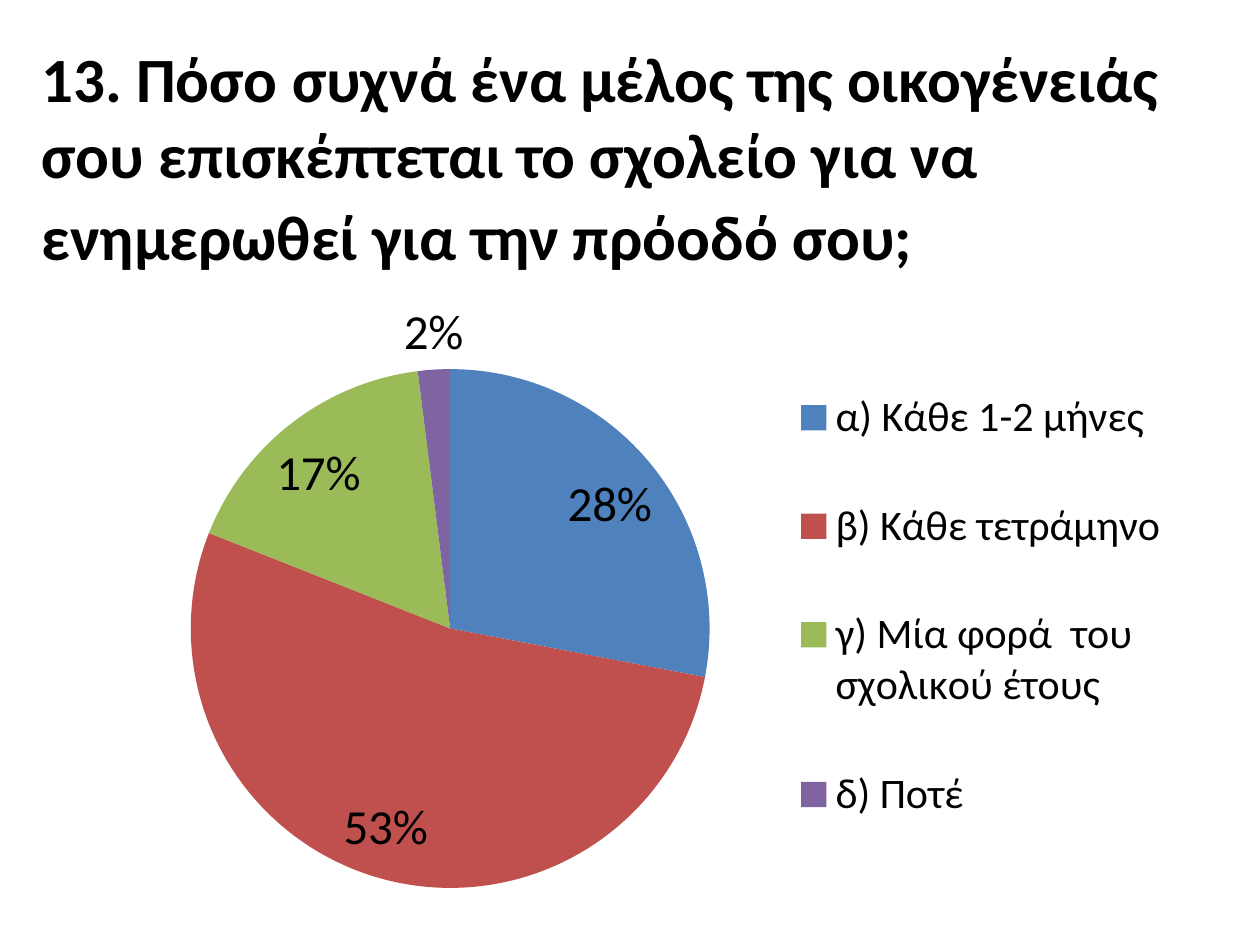
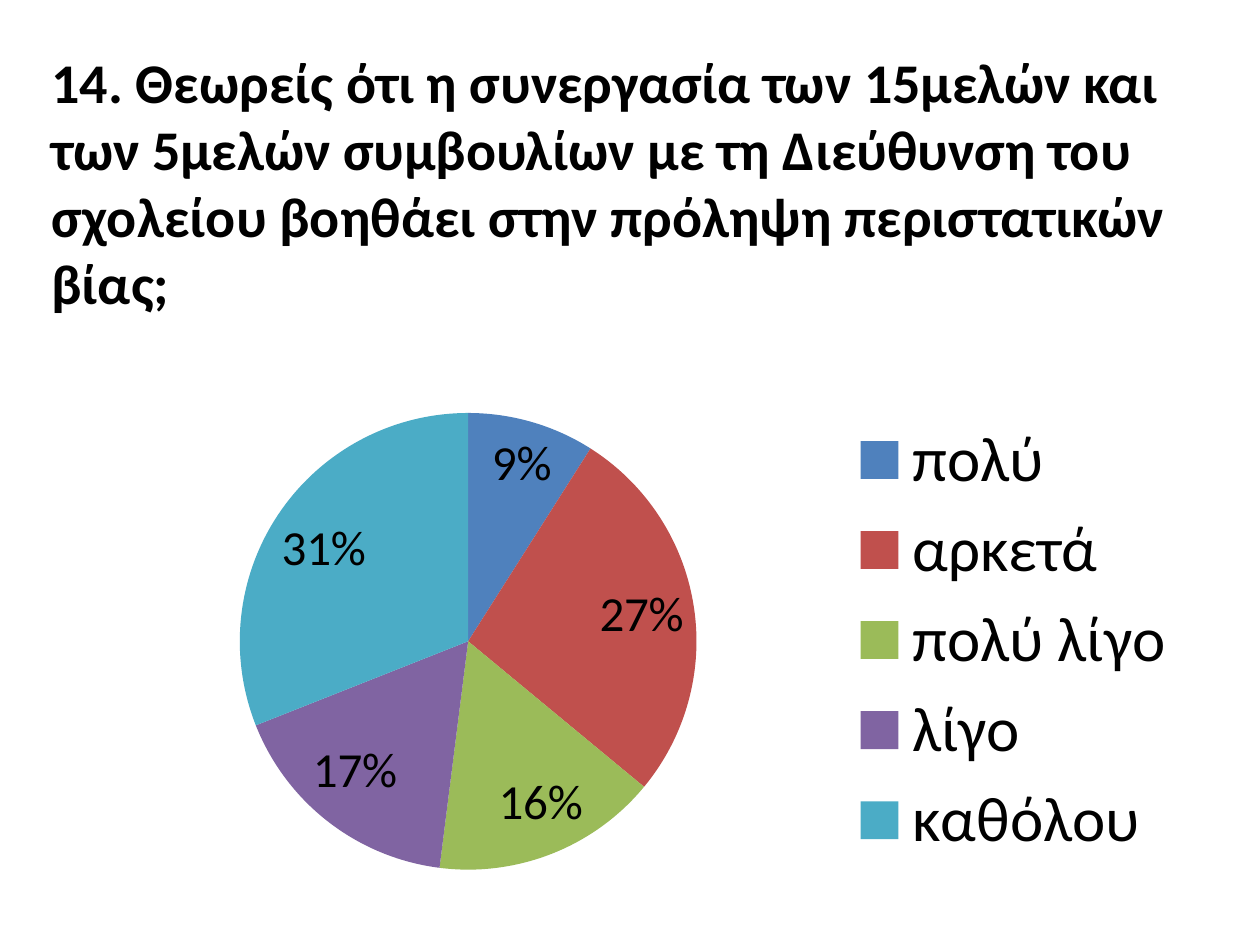
import pptx
import pptx.chart.data
import pptx.dml.color
import pptx.enum.chart
import pptx.enum.text
import pptx.util
from lxml import etree

Pt = pptx.util.Pt
FONT = "Calibri"
COLORS = {"text": "000000", "blue": "4F81BD", "red": "C0504D",
          "green": "9BBB59", "purple": "8064A2", "aqua": "4BACC6"}
SLICES = ["blue", "red", "green", "purple", "aqua"]
CHART_NS = "http://schemas.openxmlformats.org/drawingml/2006/chart"

# Boxes are (left, top, width, height) in points; pie and legend are relative to the chart
QUESTIONS = [
    {"title": "13. Πόσο συχνά ένα μέλος της οικογένειάς σου επισκέπτεται "
              "το σχολείο για να ενημερωθεί για την πρόοδό σου;",
     "title_box": (16.56, 21.6, 680.4, 136.08), "title_size": 36, "tail_size": 39.6,
     "chart_box": (36, 163.44, 648, 354.24),
     "pie_box": (73, 47.5, 296.5, 296.5), "legend_box": (412, 28, 225, 310),
     "legend_size": 24,
     "answers": {"α) Κάθε 1-2 μήνες": 0.28, "β) Κάθε τετράμηνο": 0.53,
                 "γ) Μία φορά  του σχολικού έτους": 0.17, "δ) Ποτέ": 0.02}},
    {"title": "14. Θεωρείς ότι η συνεργασία των 15μελών και των 5μελών συμβουλίων "
              "με τη Διεύθυνση του σχολείου βοηθάει στην πρόληψη περιστατικών βίας;",
     "title_box": (22.32, 21.6, 697.68, 164.16), "title_size": 32, "tail_size": 32,
     "chart_box": (36, 191.52, 648, 348.48),
     "pie_box": (101, 44.5, 261, 261), "legend_box": None,
     "legend_size": 36,
     "answers": {"πολύ": 0.09, "αρκετά": 0.27, "πολύ λίγο": 0.16,
                 "λίγο": 0.17, "καθόλου": 0.31}},
]


def rgb(name):
    return pptx.dml.color.RGBColor.from_string(COLORS[name])


def style_font(font, size, bold=False):
    font.name = FONT
    font.size = Pt(size)
    font.bold = bold
    font.color.rgb = rgb("text")


def make_layout(box, chart_box, inner=False):
    """Manual chart layout for a box given in points inside the chart."""
    layout = etree.Element(f"{{{CHART_NS}}}layout")
    manual = etree.SubElement(layout, f"{{{CHART_NS}}}manualLayout")
    settings = [("layoutTarget", "inner")] if inner else []
    settings += [("xMode", "edge"), ("yMode", "edge")]
    extents = chart_box[2:] * 2
    settings += [(tag, f"{length / extent:.4f}")
                 for tag, length, extent in zip("xywh", box, extents)]
    for tag, value in settings:
        etree.SubElement(manual, f"{{{CHART_NS}}}{tag}", val=value)
    return layout


def remove_layout(element):
    for layout in element.findall(f"{{{CHART_NS}}}layout"):
        element.remove(layout)


def add_title(slide, box, text, size, tail_size):
    shape = slide.shapes.add_textbox(*map(Pt, box))
    text_frame = shape.text_frame
    text_frame.word_wrap = True
    text_frame.vertical_anchor = pptx.enum.text.MSO_ANCHOR.MIDDLE
    paragraph = text_frame.paragraphs[0]
    paragraph.text = text
    paragraph.alignment = pptx.enum.text.PP_ALIGN.LEFT
    # The closing no-break space sets the height of the last line
    paragraph.add_run().text = " "
    for run, run_size in zip(paragraph.runs, (size, tail_size)):
        style_font(run.font, run_size, bold=True)


def add_pie(slide, box, answers, pie_box, legend_box, legend_size):
    data = pptx.chart.data.CategoryChartData(number_format="0%")
    data.categories = list(answers)
    data.add_series("Series 1", list(answers.values()))
    chart = slide.shapes.add_chart(
        pptx.enum.chart.XL_CHART_TYPE.PIE, *map(Pt, box), data).chart
    chart.has_title = False
    style_font(chart.font, 10)

    # Slices
    plot = chart.plots[0]
    plot.vary_by_categories = True
    for index, color in enumerate(SLICES[:len(answers)]):
        fill = plot.series[0].points[index].format.fill
        fill.solid()
        fill.fore_color.rgb = rgb(color)
    plot_area = chart.element.find(f".//{{{CHART_NS}}}plotArea")
    remove_layout(plot_area)
    plot_area.insert(0, make_layout(pie_box, box, inner=True))

    # Percentages
    labels = plot.series[0].data_labels
    labels.show_value = True
    labels.number_format = "0%"
    labels.number_format_is_linked = False
    labels.position = pptx.enum.chart.XL_LABEL_POSITION.BEST_FIT
    style_font(labels.font, 28)

    # Legend
    chart.has_legend = True
    legend = chart.legend
    legend.position = pptx.enum.chart.XL_LEGEND_POSITION.RIGHT
    legend.include_in_layout = False
    style_font(legend.font, legend_size)
    if legend_box:
        element = chart.element.find(f".//{{{CHART_NS}}}legend")
        remove_layout(element)
        overlay = element.find(f"{{{CHART_NS}}}overlay")
        overlay.addprevious(make_layout(legend_box, box))


def add_question_slide(presentation, question):
    slide = presentation.slides.add_slide(presentation.slide_layouts[6])
    add_title(slide, question["title_box"], question["title"],
              question["title_size"], question["tail_size"])
    add_pie(slide, question["chart_box"], question["answers"], question["pie_box"],
            question["legend_box"], question["legend_size"])


def main():
    presentation = pptx.Presentation()
    presentation.slide_width, presentation.slide_height = Pt(720), Pt(540)
    for question in QUESTIONS:
        add_question_slide(presentation, question)
    presentation.save("out.pptx")


if __name__ == "__main__":
    main()
